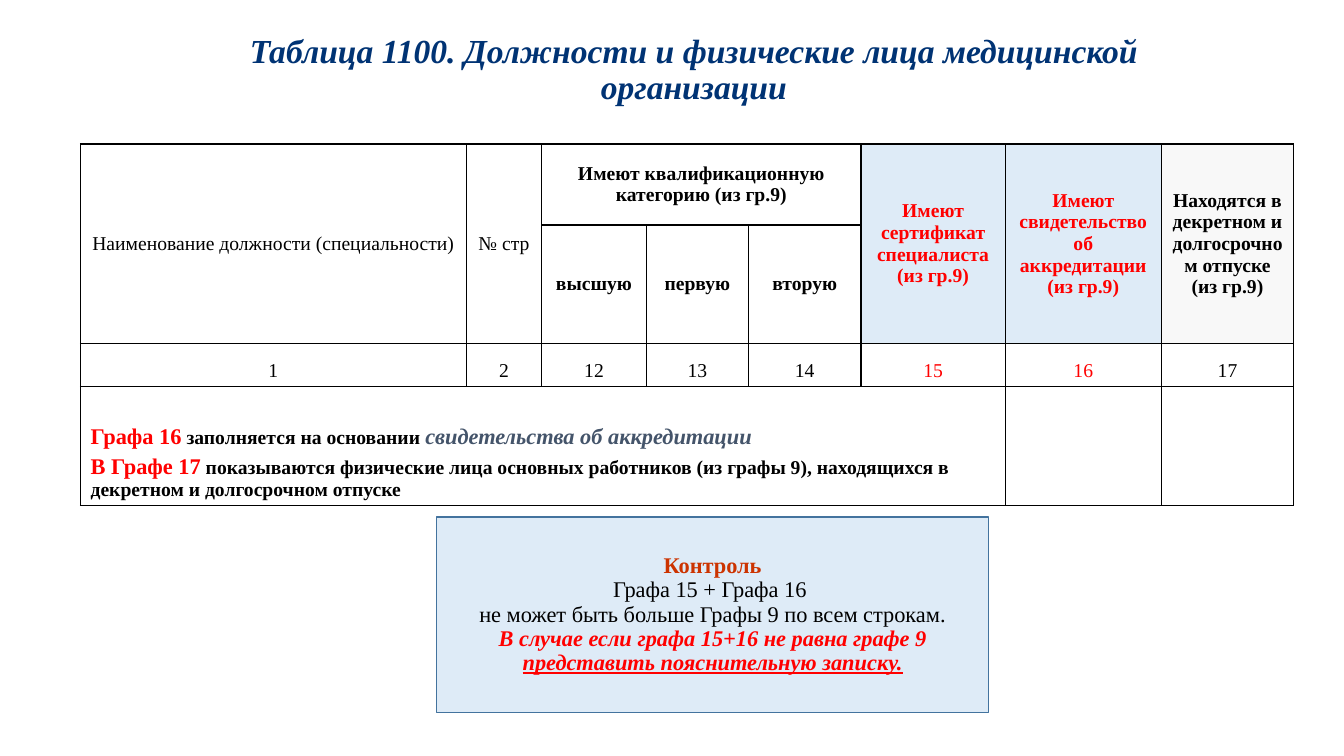
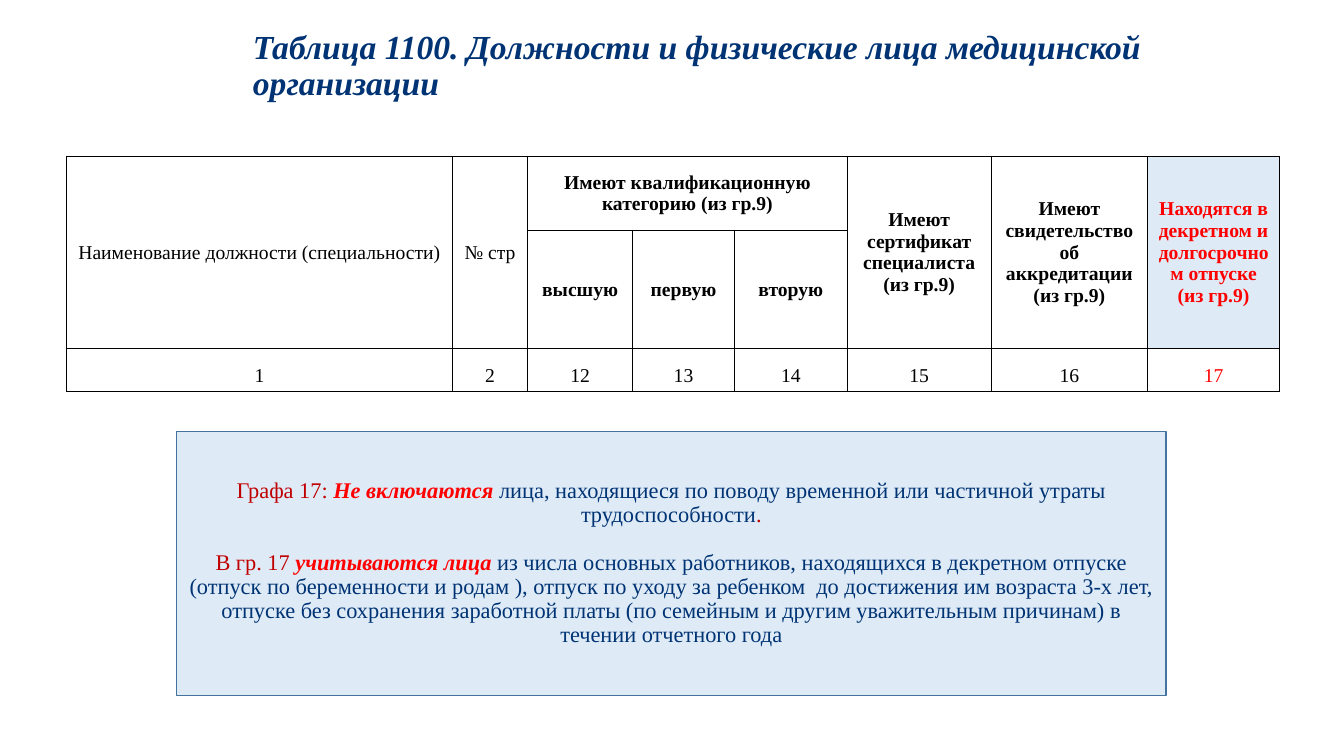
from lxml.etree import SubElement
from pptx import Presentation
from pptx.dml.color import RGBColor
from pptx.enum.shapes import MSO_SHAPE
from pptx.enum.text import MSO_ANCHOR, MSO_AUTO_SIZE, PP_ALIGN
from pptx.oxml.ns import qn
from pptx.util import Cm, Pt

FONT = "Times New Roman"
NAVY, RED, DARK_RED, ORANGE = "003374", "FF0000", "C00000", "CC3300"
BLACK, WHITE, SLATE = "000000", "FFFFFF", "44546A"
PALE_BLUE, PALE_GREY, BOX_LINE = "DEEBF7", "F8F8F8", "43739E"

TITLE = "Таблица 1100. Должности и физические лица медицинской организации"
COLUMN_WIDTHS = [9.72, 1.9, 2.64, 2.57, 2.84, 3.63, 3.94, 3.33]
COLUMN_NUMBERS = ["1", "2", "12", "13", "14", "15", "16", "17"]
# row, column, rows spanned, columns spanned, text, bold
HEADERS = [
    (0, 0, 2, 1, "Наименование должности (специальности)", False),
    (0, 1, 2, 1, "№ стр", False),
    (0, 2, 1, 3, "Имеют квалификационную категорию (из гр.9)", True),
    (0, 5, 2, 1, "Имеют сертификат специалиста (из гр.9)", True),
    (0, 6, 2, 1, "Имеют свидетельство об аккредитации (из гр.9)", True),
    (0, 7, 2, 1, "Находятся в декретном и долгосрочном отпуске (из гр.9)", True),
    (1, 2, 1, 1, "высшую", True),
    (1, 3, 1, 1, "первую", True),
    (1, 4, 1, 1, "вторую", True),
]

# A run is (text, size, colour, styles), where styles holds b, i and u
TABLE_NOTE = [
    [("Графа 16", 16, RED, "b"),
     (" ", 14, RED, "b"),
     ("заполняется на основании ", 14, BLACK, "b"),
     ("свидетельства об аккредитации", 16, SLATE, "bi")],
    [("В Графе 17", 16, RED, "b"),
     (" ", 14, RED, "b"),
     ("показываются физические лица основных работников (из графы 9), "
      "находящихся в декретном и долгосрочном отпуске", 14, BLACK, "b")],
]
CONTROL_NOTE = [
    [("Контроль", 16, ORANGE, "b")],
    [("Графа 15 + Графа 16 ", 16, BLACK, "")],
    [("не может быть больше Графы 9 по всем строкам.", 16, BLACK, "")],
    [("В случае если графа 15+16 не равна графе 9 ", 16, RED, "bi"),
     ("представить пояснительную записку.", 16, RED, "biu")],
]
LEAVE_NOTE = [
    [("Графа 17: ", 16, DARK_RED, ""),
     ("Не включаются ", 16, RED, "bi"),
     ("лица, находящиеся по поводу временной или частичной утраты "
      "трудоспособности", 16, NAVY, ""),
     (".", 16, DARK_RED, "")],
    [("В гр. 17 ", 16, DARK_RED, ""),
     ("учитываются лица ", 16, RED, "bi"),
     ("из числа основных работников, находящихся в декретном отпуске "
      "(отпуск по беременности и родам ), отпуск по уходу за ребенком  до "
      "достижения им возраста 3-х лет, отпуске без сохранения заработной "
      "платы (по семейным и другим уважительным причинам) в течении "
      "отчетного года", 16, NAVY, "")],
]

# Places are left, top, width, height in centimetres
SLIDES = [
    {"title_place": (3.63, 0.3, 27.71, 2.95), "title_align": PP_ALIGN.CENTER,
     "table_corner": (2.03, 3.63), "row_heights": [2.04, 2.96, 1.09, 3],
     "highlighted": [5, 6], "header_fills": {5: PALE_BLUE, 6: PALE_BLUE, 7: PALE_GREY},
     "table_note": TABLE_NOTE,
     "box_place": (11, 13.03, 13.92, 4.93), "box_note": CONTROL_NOTE, "box_gap": 0},
    {"title_place": (6.12, 0.48, 23.24, 2.39), "title_align": PP_ALIGN.LEFT,
     "table_corner": (1.68, 3.94), "row_heights": [1.86, 2.98, 1.09],
     "highlighted": [7], "header_fills": {7: PALE_BLUE},
     "table_note": None,
     "box_place": (4.45, 10.87, 24.94, 6.65), "box_note": LEAVE_NOTE, "box_gap": 16.6},
]


def rgb(colour):
    return RGBColor.from_string(colour)


def write(frame, paragraphs, align, line_spacing=1.0, gap=0):
    """Fill the frame; gap is the space in points above each later paragraph."""
    frame.word_wrap = True
    for index, runs in enumerate(paragraphs):
        paragraph = frame.add_paragraph() if index else frame.paragraphs[0]
        paragraph.alignment = align
        paragraph.line_spacing = line_spacing
        paragraph.space_before = Pt(gap if index else 0)
        for text, size, colour, styles in runs:
            run = paragraph.add_run()
            run.text = text
            run.font.name = FONT
            run.font.size = Pt(size)
            run.font.color.rgb = rgb(colour)
            run.font.bold = "b" in styles
            run.font.italic = "i" in styles
            run.font.underline = "u" in styles


def add_title(slide, place, align):
    title = slide.shapes.title
    title.left, title.top, title.width, title.height = map(Cm, place)
    title.text_frame.auto_size = MSO_AUTO_SIZE.NONE
    title.text_frame.vertical_anchor = MSO_ANCHOR.MIDDLE
    write(title.text_frame, [[(TITLE, 24, NAVY, "bi")]], align, 0.9)


def format_cell(cell, fill):
    properties = cell._tc.get_or_add_tcPr()
    for side in ("a:lnL", "a:lnR", "a:lnT", "a:lnB"):
        line = SubElement(properties, qn(side), w=str(Pt(1)))
        SubElement(SubElement(line, qn("a:solidFill")), qn("a:srgbClr"), val=BLACK)
    cell.fill.solid()
    cell.fill.fore_color.rgb = rgb(fill)


def add_staff_table(slide, corner, row_heights, highlighted, header_fills, note):
    left, top = map(Cm, corner)
    table = slide.shapes.add_table(
        len(row_heights), len(COLUMN_WIDTHS), left, top,
        Cm(sum(COLUMN_WIDTHS)), Cm(sum(row_heights))).table
    table.first_row = table.horz_banding = False
    for column, width in zip(table.columns, COLUMN_WIDTHS):
        column.width = Cm(width)
    for row_index, height in enumerate(row_heights):
        table.rows[row_index].height = Cm(height)
        for column_index in range(len(COLUMN_WIDTHS)):
            fill = header_fills.get(column_index, WHITE) if row_index < 2 else WHITE
            format_cell(table.cell(row_index, column_index), fill)

    def fill_cell(row, column, text, styles, anchor):
        cell = table.cell(row, column)
        cell.vertical_anchor = anchor
        colour = RED if column in highlighted else BLACK
        write(cell.text_frame, [[(text, 14, colour, styles)]], PP_ALIGN.CENTER)

    for row, column, row_span, column_span, text, bold in HEADERS:
        if row_span * column_span > 1:
            table.cell(row, column).merge(
                table.cell(row + row_span - 1, column + column_span - 1))
        fill_cell(row, column, text, "b" if bold else "", MSO_ANCHOR.MIDDLE)
    for column, number in enumerate(COLUMN_NUMBERS):
        fill_cell(2, column, number, "", MSO_ANCHOR.BOTTOM)
    if note:
        note_cell = table.cell(3, 0)
        note_cell.merge(table.cell(3, 5))
        note_cell.vertical_anchor = MSO_ANCHOR.BOTTOM
        write(note_cell.text_frame, note, PP_ALIGN.LEFT, gap=3.2)


def add_note_box(slide, place, note, gap):
    box = slide.shapes.add_shape(MSO_SHAPE.RECTANGLE, *map(Cm, place))
    box.shadow.inherit = False
    box.fill.solid()
    box.fill.fore_color.rgb = rgb(PALE_BLUE)
    box.line.color.rgb = rgb(BOX_LINE)
    box.line.width = Pt(1)
    box.text_frame.vertical_anchor = MSO_ANCHOR.MIDDLE
    write(box.text_frame, note, PP_ALIGN.CENTER, 0.9, gap)


def main():
    presentation = Presentation()
    presentation.slide_width, presentation.slide_height = Cm(33.87), Cm(19.05)
    title_only = presentation.slide_layouts[5]
    for content in SLIDES:
        slide = presentation.slides.add_slide(title_only)
        add_title(slide, content["title_place"], content["title_align"])
        add_staff_table(slide, content["table_corner"], content["row_heights"],
                        content["highlighted"], content["header_fills"],
                        content["table_note"])
        add_note_box(slide, content["box_place"], content["box_note"], content["box_gap"])
    presentation.save("out.pptx")


if __name__ == "__main__":
    main()
